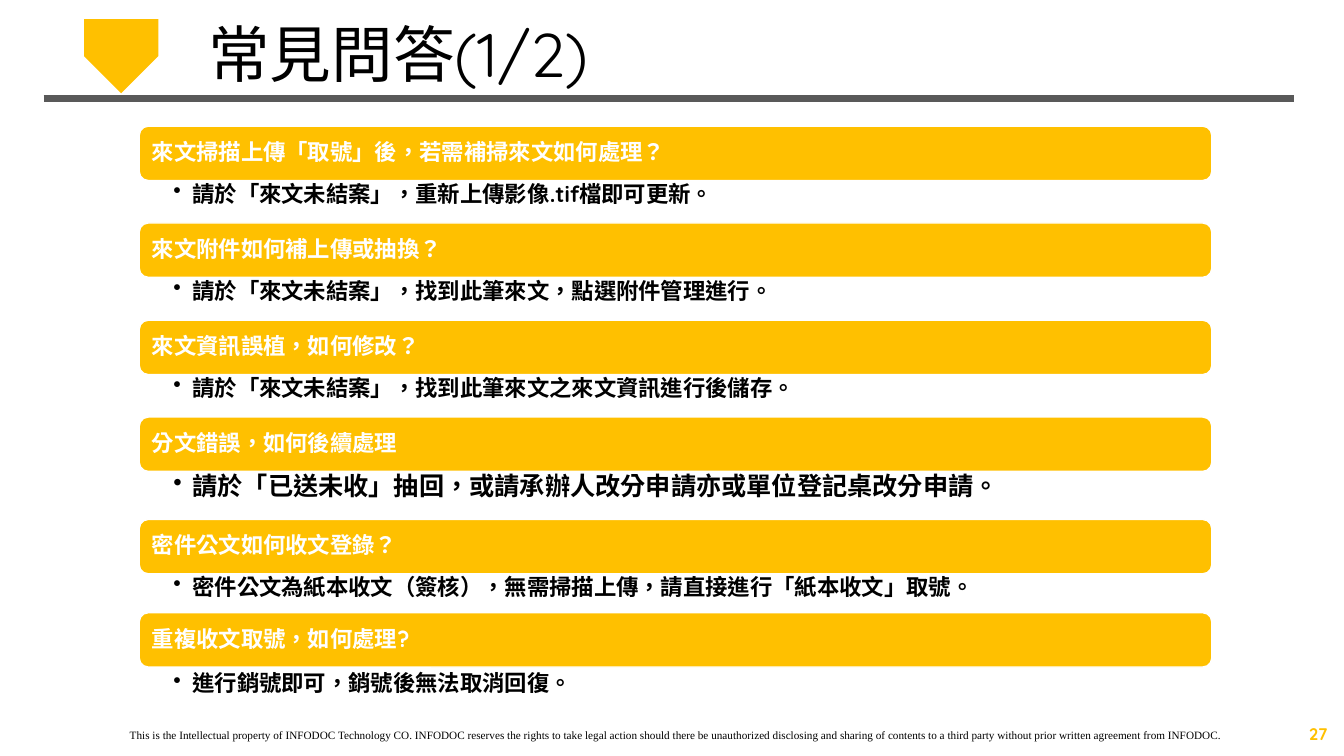
"""Build the first FAQ slide on incoming documents."""
from lxml import etree
from pptx import Presentation
from pptx.dml.color import RGBColor
from pptx.enum.lang import MSO_LANGUAGE_ID as LANG
from pptx.enum.shapes import MSO_CONNECTOR, MSO_SHAPE
from pptx.enum.text import MSO_ANCHOR as ANCHOR, PP_ALIGN as ALIGN
from pptx.oxml.ns import qn
from pptx.util import Cm, Pt

TITLE = "常見問答(1/2)"
NOTICE = (
    "This is the Intellectual property of INFODOC Technology CO. INFODOC reserves "
    "the rights to take legal action should there be unauthorized disclosing and "
    "sharing of contents to a third party without prior written agreement from INFODOC."
)
PAGE = "27"
FAQ = [
    ("來文掃描上傳「取號」後，若需補掃來文如何處理？",
     "請於「來文未結案」，重新上傳影像.tif檔即可更新。", 16),
    ("來文附件如何補上傳或抽換？",
     "請於「來文未結案」，找到此筆來文，點選附件管理進行。", 16),
    ("來文資訊誤植，如何修改？",
     "請於「來文未結案」，找到此筆來文之來文資訊進行後儲存。", 16),
    ("分文錯誤，如何後續處理",
     "請於「已送未收」抽回，或請承辦人改分申請亦或單位登記桌改分申請。", 18),
    ("密件公文如何收文登錄？",
     "密件公文為紙本收文（簽核），無需掃描上傳，請直接進行「紙本收文」取號。", 16),
    ("重複收文取號，如何處理?",
     "進行銷號即可，銷號後無法取消回復。", 16),
]
BAR_TOPS = [3.18, 5.62, 8.07, 10.51, 13.09, 15.44]
ANSWER_TOPS = [4.56, 7.0, 9.45, 11.89, 14.46, 16.89]
FAQ_LEFT, FAQ_WIDTH, BAR_HEIGHT = 3.51, 27.03, 1.37
GOLD, GRAY, BLACK, WHITE = "FFC000", "595959", "000000", "FFFFFF"
FONT = "Quicksand"


def color(hex_text):
    return RGBColor.from_string(hex_text)


def write(sp, text, size, ink, bold=False, font=FONT, anchor=ANCHOR.TOP,
          align=ALIGN.LEFT, spacing=None, bullet=False):
    tf = sp.text_frame
    tf.word_wrap = True
    tf.vertical_anchor = anchor
    p = tf.paragraphs[0]
    p.text = text
    p.alignment = align
    p.line_spacing = spacing
    if bullet:
        pPr = p._p.get_or_add_pPr()
        pPr.set("marL", str(Cm(0.48)))
        pPr.set("indent", str(-Cm(0.48)))
        etree.SubElement(pPr, qn("a:buChar")).set("char", "•")
    r = p.runs[0]
    r.font.size = Pt(size)
    r.font.bold = bold
    r.font.name = font
    r.font.color.rgb = color(ink)
    if font == FONT:
        r.font.language_id = LANG.TRADITIONAL_CHINESE
        etree.SubElement(r._r.rPr, qn("a:ea")).set("typeface", font)


def add_box(slide, left, top, width, height):
    return slide.shapes.add_textbox(Cm(left), Cm(top), Cm(width), Cm(height))


def add_filled(slide, kind, left, top, width, height):
    sp = slide.shapes.add_shape(kind, Cm(left), Cm(top), Cm(width), Cm(height))
    sp.shadow.inherit = False
    sp.fill.solid()
    sp.fill.fore_color.rgb = color(GOLD)
    return sp


def add_frame(slide):
    marker = add_filled(slide, MSO_SHAPE.SNIP_2_SAME_RECTANGLE, 2.12, 0.48, 1.87, 1.87)
    marker.adjustments[0] = 0.5
    marker.adjustments[1] = 0
    marker.rotation = 180
    marker.line.fill.background()

    rule = slide.shapes.add_connector(
        MSO_CONNECTOR.STRAIGHT, Cm(1.1), Cm(2.48), Cm(32.62), Cm(2.48))
    rule.line.color.rgb = color(GRAY)
    rule.line.width = Pt(4.5)
    etree.SubElement(rule._element.spPr, qn("a:effectLst"))

    write(add_box(slide, 5, 0.48, 10.67, 1.68), TITLE, 44, BLACK, spacing=0.9)
    write(add_box(slide, 3.02, 18.23, 28.22, 0.6), NOTICE, 8, BLACK,
          font="Times New Roman")
    write(add_box(slide, 26.09, 17.98, 7.62, 1.01), PAGE, 12, GOLD, bold=True,
          anchor=ANCHOR.MIDDLE, align=ALIGN.RIGHT)


def add_faq(slide):
    for (question, answer, size), bar_top, top in zip(FAQ, BAR_TOPS, ANSWER_TOPS):
        bar = add_filled(slide, MSO_SHAPE.ROUNDED_RECTANGLE,
                         FAQ_LEFT, bar_top, FAQ_WIDTH, BAR_HEIGHT)
        bar.line.color.rgb = color(WHITE)
        bar.line.width = Pt(1)
        write(bar, question, 16, WHITE, bold=True, anchor=ANCHOR.MIDDLE, spacing=0.9)

        sp = add_box(slide, FAQ_LEFT, top, FAQ_WIDTH, 1.07 * size / 16)
        tf = sp.text_frame
        tf.margin_left, tf.margin_right = Cm(0.86), Cm(0.3)
        tf.margin_top = tf.margin_bottom = Cm(0.05)
        write(sp, answer, size, BLACK, bold=True, spacing=0.9, bullet=True)


def main():
    prs = Presentation()
    prs.slide_width, prs.slide_height = Cm(33.87), Cm(19.05)
    slide = prs.slides.add_slide(prs.slide_layouts[6])
    add_frame(slide)
    add_faq(slide)
    prs.save("out.pptx")


if __name__ == "__main__":
    main()
